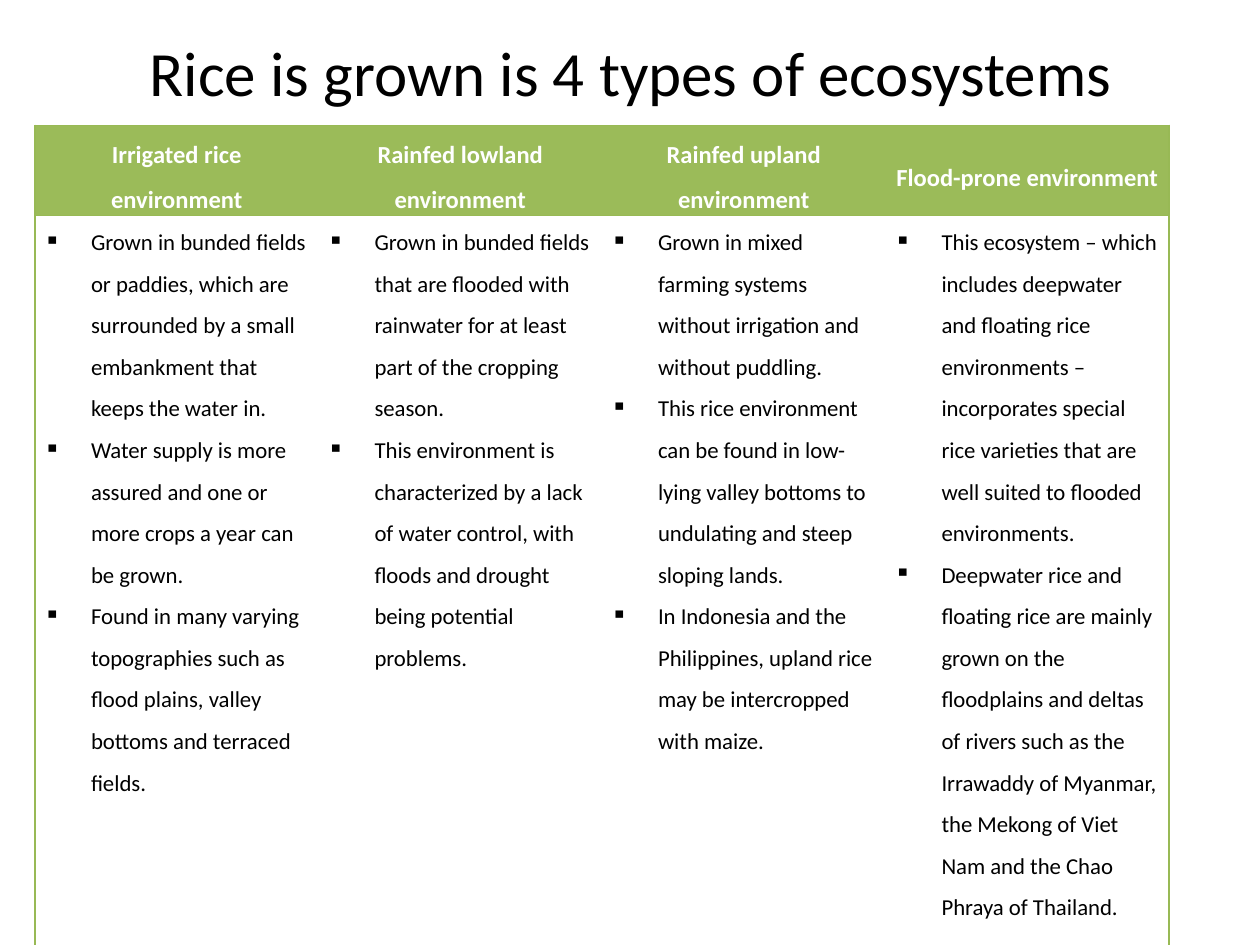
from dataclasses import dataclass

import pptx
import pptx.dml.color
import pptx.enum.text
import pptx.oxml.ns
import pptx.util
from lxml import etree

Pt = pptx.util.Pt
ALIGN = pptx.enum.text.PP_ALIGN
MIDDLE = pptx.enum.text.MSO_ANCHOR.MIDDLE
TOP = pptx.enum.text.MSO_ANCHOR.TOP


@dataclass
class Theme:
    font: str = "Calibri"
    title_size: int = 36
    header_size: int = 14
    body_size: int = 13
    ink: str = "000000"
    paper: str = "FFFFFF"
    green: str = "9BBB59"
    border: str = "98B955"
    border_width: float = 0.75
    bullet: str = "▪"
    bullet_indent: float = 27


ECOSYSTEMS = {
    "Irrigated rice environment": [
        "Grown in bunded fields or paddies, which are surrounded by a small "
        "embankment that keeps the water in.",
        "Water supply is more assured and one or more crops a year can be grown.",
        "Found in many varying topographies such as flood plains, valley bottoms "
        "and terraced fields.",
    ],
    "Rainfed lowland environment": [
        "Grown in bunded fields that are flooded with rainwater for at least part "
        "of the cropping season.",
        "This environment is characterized by a lack of water control, with floods "
        "and drought being potential problems.",
    ],
    "Rainfed upland environment": [
        "Grown in mixed farming systems without irrigation and without puddling.",
        "This rice environment can be found in low-lying valley bottoms to "
        "undulating and steep sloping lands.",
        "In Indonesia and the Philippines, upland rice may be intercropped with maize.",
    ],
    "Flood-prone environment": [
        "This ecosystem – which includes deepwater and floating rice environments – "
        "incorporates special rice varieties that are well suited to flooded "
        "environments.",
        "Deepwater rice and floating rice are mainly grown on the floodplains and "
        "deltas of rivers such as the Irrawaddy of Myanmar, the Mekong of Viet Nam "
        "and the Chao Phraya of Thailand.",
    ],
}


def add_xml(parent, tag, **attributes):
    return etree.SubElement(parent, pptx.oxml.ns.qn(tag), attributes)


class SlideBuilder:
    def __init__(self, deck, theme):
        self.theme = theme
        self.page = deck.slides.add_slide(deck.slide_layouts[6])

    def style(self, para, size, color, bold=False, align=ALIGN.LEFT):
        para.alignment = align
        para.font.name = self.theme.font
        para.font.size = Pt(size)
        para.font.bold = bold
        para.font.color.rgb = pptx.dml.color.RGBColor.from_string(color)

    def title(self, text, left, top, width, height):
        box = self.page.shapes.add_textbox(Pt(left), Pt(top), Pt(width), Pt(height))
        frame = box.text_frame
        frame.word_wrap = True
        frame.vertical_anchor = MIDDLE
        frame.text = text
        self.style(frame.paragraphs[0], self.theme.title_size, self.theme.ink,
                   align=ALIGN.CENTER)

    def table(self, columns, left, top, column_width, row_heights):
        count = len(columns)
        table = self.page.shapes.add_table(
            len(row_heights), count, Pt(left), Pt(top),
            Pt(column_width * count), Pt(sum(row_heights))).table
        table.horz_banding = False
        for row, height in zip(table.rows, row_heights):
            row.height = Pt(height)
        for index, (heading, points) in enumerate(columns.items()):
            table.columns[index].width = Pt(column_width)
            sides = {"L": index == 0, "R": index == count - 1, "T": True, "B": True}
            self.header_cell(table.cell(0, index), heading, sides)
            self.body_cell(table.cell(1, index), points, sides)

    def header_cell(self, cell, heading, sides):
        self.prepare_cell(cell, [heading], self.theme.green, MIDDLE, sides)
        para = cell.text_frame.paragraphs[0]
        self.style(para, self.theme.header_size, self.theme.paper, True, ALIGN.CENTER)

    def body_cell(self, cell, points, sides):
        self.prepare_cell(cell, points, self.theme.paper, TOP, sides)
        for para in cell.text_frame.paragraphs:
            self.style(para, self.theme.body_size, self.theme.ink)
            self.bullet(para)

    def prepare_cell(self, cell, lines, fill, anchor, sides):
        cell.text_frame.text = "\n".join(lines)
        cell.vertical_anchor = anchor
        cell.margin_left = cell.margin_right = Pt(5)
        cell.margin_top = cell.margin_bottom = Pt(0)
        for para in cell.text_frame.paragraphs:
            para.line_spacing = 1.5
        self.borders(cell, sides)
        cell.fill.solid()
        cell.fill.fore_color.rgb = pptx.dml.color.RGBColor.from_string(fill)

    def borders(self, cell, sides):
        properties = cell._tc.get_or_add_tcPr()
        for side, visible in sides.items():
            width = str(Pt(self.theme.border_width))
            line = add_xml(properties, f"a:ln{side}", w=width)
            if visible:
                solid = add_xml(line, "a:solidFill")
                add_xml(solid, "a:srgbClr", val=self.theme.border)
            else:
                add_xml(line, "a:noFill")

    def bullet(self, para):
        properties = para._p.get_or_add_pPr()
        indent = Pt(self.theme.bullet_indent)
        properties.set("marL", str(indent))
        properties.set("indent", str(-indent))
        mark = etree.Element(pptx.oxml.ns.qn("a:buChar"), char=self.theme.bullet)
        # The bullet belongs before the default run properties
        defaults = properties.find(pptx.oxml.ns.qn("a:defRPr"))
        if defaults is None:
            properties.append(mark)
        else:
            defaults.addprevious(mark)


def main():
    deck = pptx.Presentation()
    deck.slide_width, deck.slide_height = Pt(720), Pt(540)
    builder = SlideBuilder(deck, Theme())

    # Heading
    builder.title("Rice is grown is 4 types of ecosystems", 36.5, 9.5, 648, 62.5)

    # One column for each ecosystem
    builder.table(ECOSYSTEMS, 20, 71.5, 162, [51.5, 418])

    deck.save("out.pptx")


if __name__ == "__main__":
    main()
